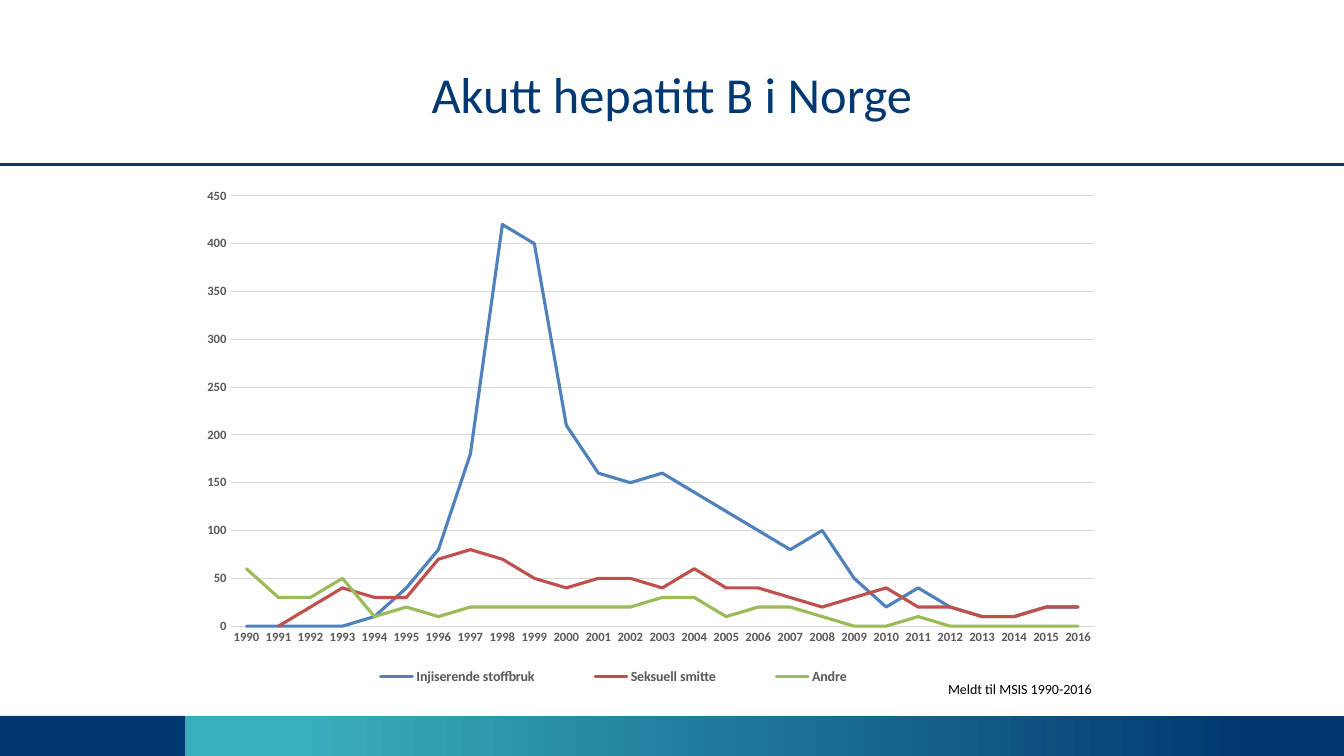
from typing import NamedTuple

import lxml.etree
import pptx
import pptx.chart.data
import pptx.dml.color
import pptx.enum.chart
import pptx.enum.shapes
import pptx.enum.text
import pptx.oxml.ns
import pptx.util

WIDTH, HEIGHT = 13.33, 7.5
FONT = "Calibri"
NAVY, TEAL, GREY, PALE = "003871", "39AEBB", "595959", "D9D9D9"
FOOT_TOP, FOOT_SPLIT = 0.947, 0.138
FIRST_YEAR, LAST_YEAR = 1990, 2016


class Area(NamedTuple):
    """Left, top, width and height as shares of the surrounding frame."""
    left: float
    top: float
    width: float
    height: float


class Label(NamedTuple):
    text: str
    area: Area
    size: int
    color: str
    align: pptx.enum.text.PP_ALIGN
    anchor: pptx.enum.text.MSO_ANCHOR


class Trend(NamedTuple):
    name: str
    color: str
    values: list


class Band(NamedTuple):
    area: Area
    colors: list


BANDS = [
    Band(Area(FOOT_SPLIT, FOOT_TOP, 1 - FOOT_SPLIT, 1 - FOOT_TOP), [TEAL, NAVY]),
    Band(Area(0, FOOT_TOP, FOOT_SPLIT, 1 - FOOT_TOP), [NAVY]),
]
LABELS = [
    Label("Akutt hepatitt B i Norge", Area(0.05, 0.04, 0.9, 0.167), 36, NAVY,
          pptx.enum.text.PP_ALIGN.CENTER, pptx.enum.text.MSO_ANCHOR.MIDDLE),
    Label("Meldt til MSIS 1990-2016", Area(0.698, 0.893, 0.139, 0.036), 10, "000000",
          pptx.enum.text.PP_ALIGN.LEFT, pptx.enum.text.MSO_ANCHOR.TOP),
]
TRENDS = [
    Trend("Injiserende stoffbruk", "4F81BD",
          [0, 0, 0, 0, 10, 40, 80, 180, 420, 400, 210, 160, 150, 160, 140, 120, 100,
           80, 100, 50, 20, 40, 20, 10, 10, 20, 20]),
    Trend("Seksuell smitte", "C0504D",
          [None, 0, 20, 40, 30, 30, 70, 80, 70, 50, 40, 50, 50, 40, 60, 40, 40,
           30, 20, 30, 40, 20, 20, 10, 10, 20, 20]),
    Trend("Andre", "9BBB59",
          [60, 30, 30, 50, 10, 20, 10, 20, 20, 20, 20, 20, 20, 30, 30, 10, 20,
           20, 10, 0, 0, 10, 0, 0, 0, 0, 0]),
]
CHART_AREA = Area(0.133, 0.234, 0.688, 0.696)
PLOT_AREA = Area(0.056, 0.036, 0.934, 0.818)
LEGEND_AREA = Area(0.158, 0.92, 0.625, 0.06)


def rgb(color: str) -> pptx.dml.color.RGBColor:
    return pptx.dml.color.RGBColor.from_string(color)


def place(area: Area) -> tuple:
    """Turn shares of the slide into lengths."""
    return tuple(pptx.util.Inches(share * side)
                 for share, side in zip(area, (WIDTH, HEIGHT) * 2))


def set_font(font, size: int, color: str, bold: bool = False) -> None:
    font.name, font.size, font.bold = FONT, pptx.util.Pt(size), bold
    font.color.rgb = rgb(color)


def set_line(line, color: str, width: float) -> None:
    line.color.rgb = rgb(color)
    line.width = pptx.util.Pt(width)


def add_band(page, band: Band) -> None:
    box = page.shapes.add_shape(pptx.enum.shapes.MSO_SHAPE.RECTANGLE, *place(band.area))
    box.shadow.inherit = False
    box.line.fill.background()
    if len(band.colors) == 1:
        box.fill.solid()
        box.fill.fore_color.rgb = rgb(band.colors[0])
        return
    box.fill.gradient()
    box.fill.gradient_angle = 0
    for stop, color, position in zip(box.fill.gradient_stops, band.colors, (0.1, 0.92)):
        stop.color.rgb = rgb(color)
        stop.position = position


def add_rule(page, top: float) -> None:
    start_x, start_y, length, _ = place(Area(0, top, 1, 0))
    rule = page.shapes.add_connector(pptx.enum.shapes.MSO_CONNECTOR.STRAIGHT,
                                     start_x, start_y, length, start_y)
    set_line(rule.line, NAVY, 2)
    lxml.etree.SubElement(rule._element.spPr, pptx.oxml.ns.qn("a:effectLst"))


def add_label(page, label: Label) -> None:
    frame = page.shapes.add_textbox(*place(label.area)).text_frame
    frame.word_wrap = True
    frame.vertical_anchor = label.anchor
    para = frame.paragraphs[0]
    para.text = label.text
    para.alignment = label.align
    set_font(para.font, label.size, label.color)


def make_layout(area: Area, inner: bool = False):
    """Build a fixed chart layout from shares of the chart's frame."""
    qn = pptx.oxml.ns.qn
    layout = lxml.etree.Element(qn("c:layout"))
    manual = lxml.etree.SubElement(layout, qn("c:manualLayout"))
    settings = [("layoutTarget", "inner")] if inner else []
    settings += [("xMode", "edge"), ("yMode", "edge")]
    settings += zip("xywh", map(str, area))
    for tag, value in settings:
        lxml.etree.SubElement(manual, qn(f"c:{tag}")).set("val", value)
    return layout


def add_trend_chart(page) -> None:
    data = pptx.chart.data.CategoryChartData()
    data.categories = [str(year) for year in range(FIRST_YEAR, LAST_YEAR + 1)]
    for trend in TRENDS:
        data.add_series(trend.name, trend.values)
    chart = page.shapes.add_chart(pptx.enum.chart.XL_CHART_TYPE.LINE,
                                  *place(CHART_AREA), data).chart
    chart.has_title = False
    set_font(chart.font, 10, "000000")
    chart.plots[0].vary_by_categories = False
    for series, trend in zip(chart.plots[0].series, TRENDS):
        series.smooth = False
        series.marker.style = pptx.enum.chart.XL_MARKER_STYLE.NONE
        set_line(series.format.line, trend.color, 2.25)
    for stroke in chart._chartSpace.xpath(".//c:ser/c:spPr/a:ln"):
        stroke.set("cap", "rnd")

    years, cases = chart.category_axis, chart.value_axis
    for axis in (years, cases):
        axis.major_tick_mark = axis.minor_tick_mark = pptx.enum.chart.XL_TICK_MARK.NONE
        set_font(axis.tick_labels.font, 9, GREY, bold=True)
    set_line(years.format.line, PALE, 0.75)
    cases.format.line.fill.background()
    cases.minimum_scale, cases.maximum_scale, cases.major_unit = 0, 450, 50
    set_line(cases.major_gridlines.format.line, PALE, 0.75)

    chart.has_legend = True
    legend = chart.legend
    legend.position = pptx.enum.chart.XL_LEGEND_POSITION.BOTTOM
    legend.include_in_layout = False
    set_font(legend.font, 10, GREY, bold=True)
    for old in chart._chartSpace.xpath(".//c:plotArea/c:layout | .//c:legend/c:layout"):
        old.getparent().remove(old)
    chart._chartSpace.xpath(".//c:plotArea")[0].insert(0, make_layout(PLOT_AREA, inner=True))
    chart._chartSpace.xpath(".//c:legendPos")[0].addnext(make_layout(LEGEND_AREA))


def main() -> None:
    deck = pptx.Presentation()
    deck.slide_width = pptx.util.Inches(WIDTH)
    deck.slide_height = pptx.util.Inches(HEIGHT)
    page = deck.slides.add_slide(deck.slide_layouts[6])
    for band in BANDS:
        add_band(page, band)
    add_rule(page, 0.218)
    add_trend_chart(page)
    for label in LABELS:
        add_label(page, label)
    deck.save("out.pptx")


if __name__ == "__main__":
    main()
